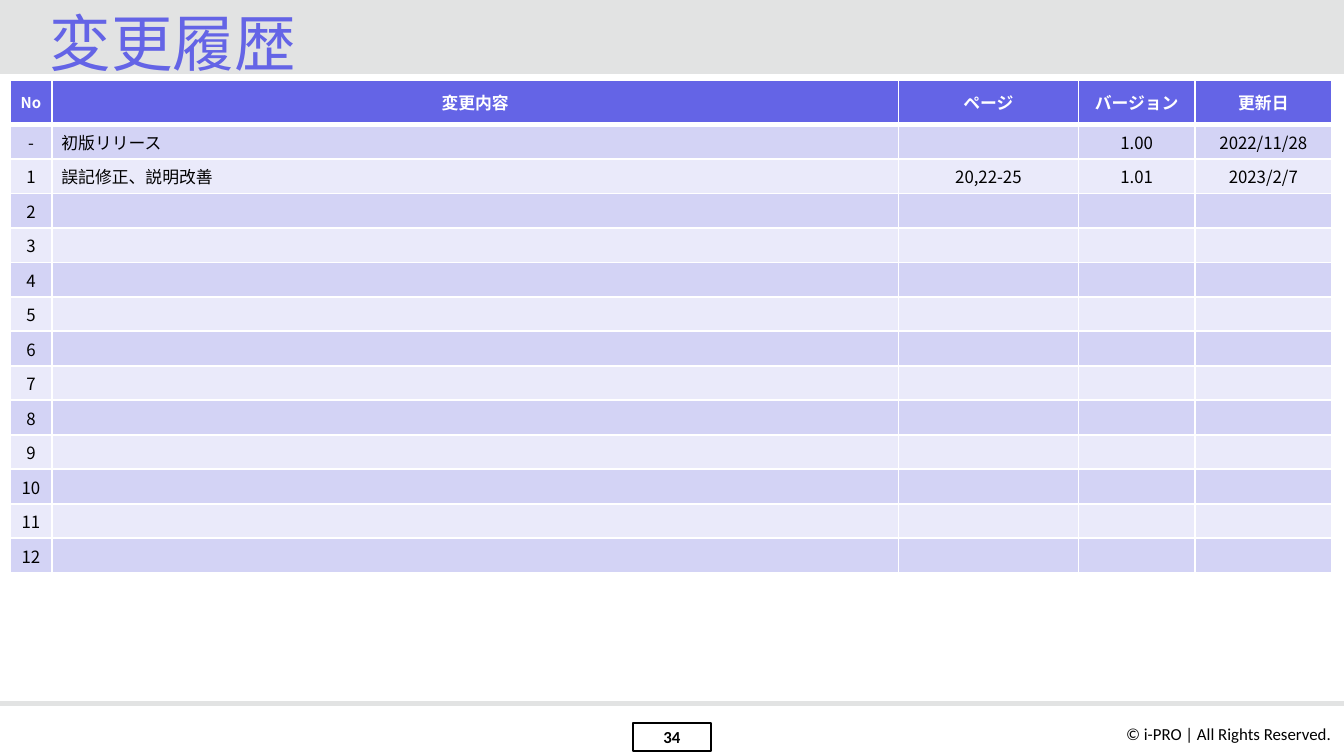
from lxml import etree
from pptx import Presentation
from pptx.dml.color import RGBColor
from pptx.enum import shapes, text
from pptx.oxml.ns import qn
from pptx.util import Cm, Pt

TITLE = "変更履歴"
HEADER = ["No", "変更内容", "ページ", "バージョン", "更新日"]
REVISIONS = [
    ["-", "初版リリース", "", "1.00", "2022/11/28"],
    ["1", "誤記修正、説明改善", "20,22-25", "1.01", "2023/2/7"],
]
LAST_NO = 12
PAGE = "34"
COPYRIGHT = "© i-PRO | All Rights Reserved."

COLORS = {"accent": "6464E6", "grey": "E2E3E3", "dark_band": "D3D3F5",
          "light_band": "EAEAFA", "white": "FFFFFF", "black": "000000"}
LATIN, CJK = "Calibri", "Noto Sans CJK JP"
SLIDE_W, SLIDE_H = 25.4, 14.29
COL_WIDTHS = [0.79, 16, 3.4, 2.2, 2.59]
HEADER_H, ROW_H = 0.84, 0.6
RULE_Y = 13.3


def rgb(name):
    return RGBColor.from_string(COLORS[name])


def add_run(p, content, size, color, font=LATIN, bold=False):
    r = p.add_run()
    r.text = content
    r.font.size = Pt(size)
    r.font.bold = bold
    r.font.name = font
    r.font.color.rgb = rgb(color)
    ea = etree.SubElement(r.font._element, qn("a:ea"))
    ea.set("typeface", CJK)


def set_margins(box, left, top, right, bottom):
    box.margin_left, box.margin_top = Cm(left), Cm(top)
    box.margin_right, box.margin_bottom = Cm(right), Cm(bottom)


def add_box(s, left, top, width, height):
    sp = s.shapes.add_shape(shapes.MSO_SHAPE.RECTANGLE,
                            Cm(left), Cm(top), Cm(width), Cm(height))
    sp.shadow.inherit = False
    return sp


def set_borders(cell, bottom):
    tc_pr = cell._tc.get_or_add_tcPr()
    for side, width in (("L", 1), ("R", 1), ("T", 1), ("B", bottom)):
        ln = etree.SubElement(tc_pr, qn(f"a:ln{side}"), w=str(Pt(width)))
        fill = etree.SubElement(ln, qn("a:solidFill"))
        etree.SubElement(fill, qn("a:srgbClr"), val=COLORS["white"])


def fill_cell(cell, content, row, col):
    is_header = row == 0
    band = "accent" if is_header else ("dark_band" if row % 2 else "light_band")
    set_borders(cell, 3 if is_header else 1)
    cell.fill.solid()
    cell.fill.fore_color.rgb = rgb(band)
    set_margins(cell, 0.18, 0.1, 0.18, 0.09)
    cell.vertical_anchor = text.MSO_ANCHOR.MIDDLE
    p = cell.text_frame.paragraphs[0]
    left = col == 1 and not is_header
    p.alignment = text.PP_ALIGN.LEFT if left else text.PP_ALIGN.CENTER
    if content:
        size = 8 if is_header and col == 0 else 9
        add_run(p, content, size, "white" if is_header else "black", CJK, is_header)
    else:
        p._p.get_or_add_endParaRPr().set("sz", "900")


def add_frame(s):
    bar = add_box(s, 0, 0, SLIDE_W, 1.4)
    bar.fill.solid()
    bar.fill.fore_color.rgb = rgb("grey")
    bar.line.fill.background()

    sp = s.shapes.add_textbox(Cm(20.95), Cm(13.56), Cm(4.45), Cm(0.64))
    tf = sp.text_frame
    tf.word_wrap = False
    tf.auto_size = text.MSO_AUTO_SIZE.SHAPE_TO_FIT_TEXT
    p = tf.paragraphs[0]
    p.alignment = text.PP_ALIGN.RIGHT
    add_run(p, COPYRIGHT, 9, "black")

    rule = s.shapes.add_connector(shapes.MSO_CONNECTOR.STRAIGHT,
                                  Cm(0), Cm(RULE_Y), Cm(SLIDE_W), Cm(RULE_Y))
    rule.line.color.rgb = rgb("grey")
    rule.line.width = Pt(3)
    etree.SubElement(rule._element.spPr, qn("a:effectLst"))

    page_w = 1.48
    page = add_box(s, (SLIDE_W - page_w) / 2, 13.66, page_w, 0.53)
    page.fill.background()
    page.line.color.rgb = rgb("black")
    page.line.width = Pt(1)
    tf = page.text_frame
    set_margins(tf, 0.08, 0.08, 0.08, 0.08)
    tf.vertical_anchor = text.MSO_ANCHOR.MIDDLE
    p = tf.paragraphs[0]
    p.alignment = text.PP_ALIGN.CENTER
    add_run(p, PAGE, 9, "black", bold=True)


def add_title(s):
    title = s.shapes.title
    s.shapes._spTree.append(title._element)
    title.left, title.top = Cm(0.69), Cm(0.28)
    title.width, title.height = Cm(23.72), Cm(1.07)
    tf = title.text_frame
    tf.word_wrap = True
    tf.auto_size = text.MSO_AUTO_SIZE.NONE
    tf.vertical_anchor = text.MSO_ANCHOR.MIDDLE
    set_margins(tf, 0.25, 0.13, 0.25, 0)
    p = tf.paragraphs[0]
    p.alignment = text.PP_ALIGN.LEFT
    p.line_spacing = 0.9
    add_run(p, TITLE, 33, "accent")


def add_history(s):
    blank = [""] * (len(HEADER) - 1)
    pending = [[str(no)] + blank for no in range(len(REVISIONS), LAST_NO + 1)]
    rows = [HEADER] + REVISIONS + pending
    height = HEADER_H + ROW_H * (len(rows) - 1)
    table = s.shapes.add_table(len(rows), len(HEADER), Cm(0.19), Cm(1.51),
                               Cm(sum(COL_WIDTHS)), Cm(height)).table
    table.horz_banding = False
    for column, width in zip(table.columns, COL_WIDTHS):
        column.width = Cm(width)
    for i, values in enumerate(rows):
        table.rows[i].height = Cm(ROW_H if i else HEADER_H)
        for j, value in enumerate(values):
            fill_cell(table.cell(i, j), value, i, j)


def main():
    prs = Presentation()
    prs.slide_width, prs.slide_height = Cm(SLIDE_W), Cm(SLIDE_H)
    s = prs.slides.add_slide(prs.slide_layouts[5])
    add_frame(s)
    add_title(s)
    add_history(s)
    prs.save("out.pptx")


if __name__ == "__main__":
    main()
